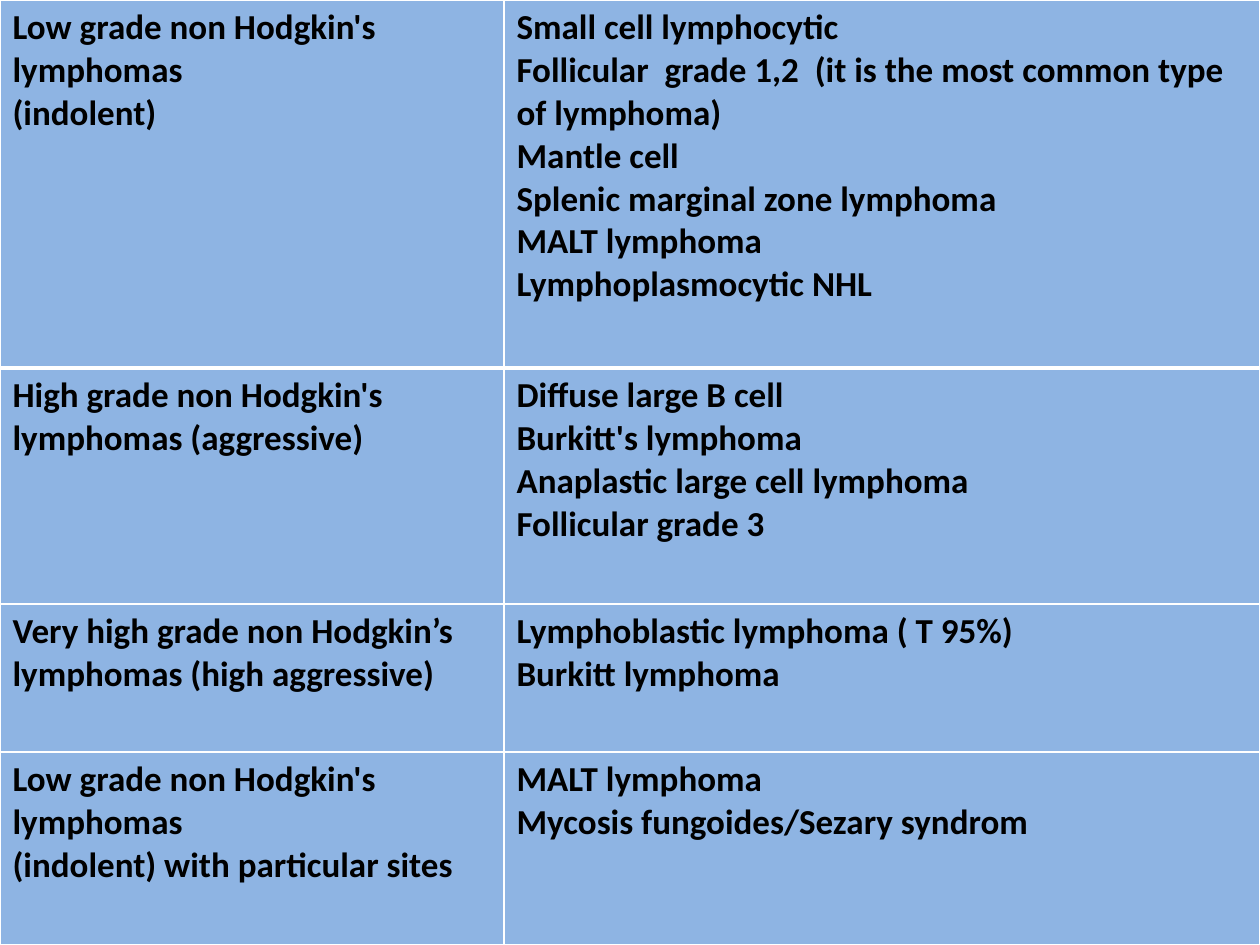
import pptx
import pptx.dml.color
import pptx.enum.text
import pptx.oxml.ns
import pptx.util
import lxml.etree

BLACK = pptx.dml.color.RGBColor(0x00, 0x00, 0x00)
WHITE = pptx.dml.color.RGBColor(0xFF, 0xFF, 0xFF)
BLUE = pptx.dml.color.RGBColor(0x8E, 0xB4, 0xE3)

LEFT = pptx.enum.text.PP_ALIGN.LEFT
JUSTIFY = pptx.enum.text.PP_ALIGN.JUSTIFY

SLIDE_W, SLIDE_H = 1260, 945
COL_WIDTHS = [504, 756]
ROW_HEIGHTS = [368, 236, 148, 193]
THIN, THICK = 1, 3

LYMPHOMA_GRADES = [
    (
        ["Low grade non Hodgkin's lymphomas", "(indolent)"],
        [
            "Small cell lymphocytic",
            "Follicular  grade 1,2  (it is the most common type of lymphoma)",
            "Mantle cell",
            "Splenic marginal zone lymphoma",
            "MALT lymphoma",
            "Lymphoplasmocytic NHL",
        ],
    ),
    (
        ["High grade non Hodgkin's lymphomas (aggressive)"],
        [
            "Diffuse large B cell",
            "Burkitt's lymphoma",
            "Anaplastic large cell lymphoma",
            "Follicular grade 3",
        ],
    ),
    (
        ["Very high grade non Hodgkin’s lymphomas (high aggressive)"],
        ["Lymphoblastic lymphoma ( T 95%)", "Burkitt lymphoma"],
    ),
    (
        ["Low grade non Hodgkin's lymphomas", "(indolent) with particular sites"],
        ["MALT lymphoma", "Mycosis fungoides/Sezary syndrom"],
    ),
]
JUSTIFIED_CELLS = {(2, 1)}


def px(n):
    return pptx.util.Emu(round(n * 914400 / 126))


class SlideBuilder:
    font = "Calibri"
    size = pptx.util.Pt(20)

    def __init__(self, prs):
        self.s = prs.slides.add_slide(prs.slide_layouts[6])

    def border(self, cell, side, width):
        qn = pptx.oxml.ns.qn
        tc_pr = cell._tc.get_or_add_tcPr()
        ln = lxml.etree.SubElement(tc_pr, qn(f"a:ln{side}"), w=str(pptx.util.Pt(width)))
        fill = lxml.etree.SubElement(ln, qn("a:solidFill"))
        lxml.etree.SubElement(fill, qn("a:srgbClr"), val=str(WHITE))

    def text(self, tf, lines, align):
        for i, line in enumerate(lines):
            p = tf.paragraphs[0] if i == 0 else tf.add_paragraph()
            p.alignment = align
            r = p.add_run()
            r.text = line
            r.font.name = self.font
            r.font.size = self.size
            r.font.bold = True
            r.font.color.rgb = BLACK

    def cell(self, cell, lines, align, top, bottom):
        for side, width in (("L", THIN), ("R", THIN), ("T", top), ("B", bottom)):
            self.border(cell, side, width)
        cell.fill.solid()
        cell.fill.fore_color.rgb = BLUE
        self.text(cell.text_frame, lines, align)

    def table(self, rows, x, y, widths, heights):
        frame = self.s.shapes.add_table(
            len(heights), len(widths), px(x), px(y), px(sum(widths)), px(sum(heights))
        )
        table = frame.table
        table.horz_banding = False
        for col, width in zip(table.columns, widths):
            col.width = px(width)
        for row, height in zip(table.rows, heights):
            row.height = px(height)
        for i, row in enumerate(rows):
            top = THICK if i == 1 else THIN
            bottom = THICK if i == 0 else THIN
            for j, lines in enumerate(row):
                align = JUSTIFY if (i, j) in JUSTIFIED_CELLS else LEFT
                self.cell(table.cell(i, j), lines, align, top, bottom)


def main():
    prs = pptx.Presentation()
    prs.slide_width = px(SLIDE_W)
    prs.slide_height = px(SLIDE_H)
    SlideBuilder(prs).table(LYMPHOMA_GRADES, 0, 0, COL_WIDTHS, ROW_HEIGHTS)
    prs.save("out.pptx")


if __name__ == "__main__":
    main()
